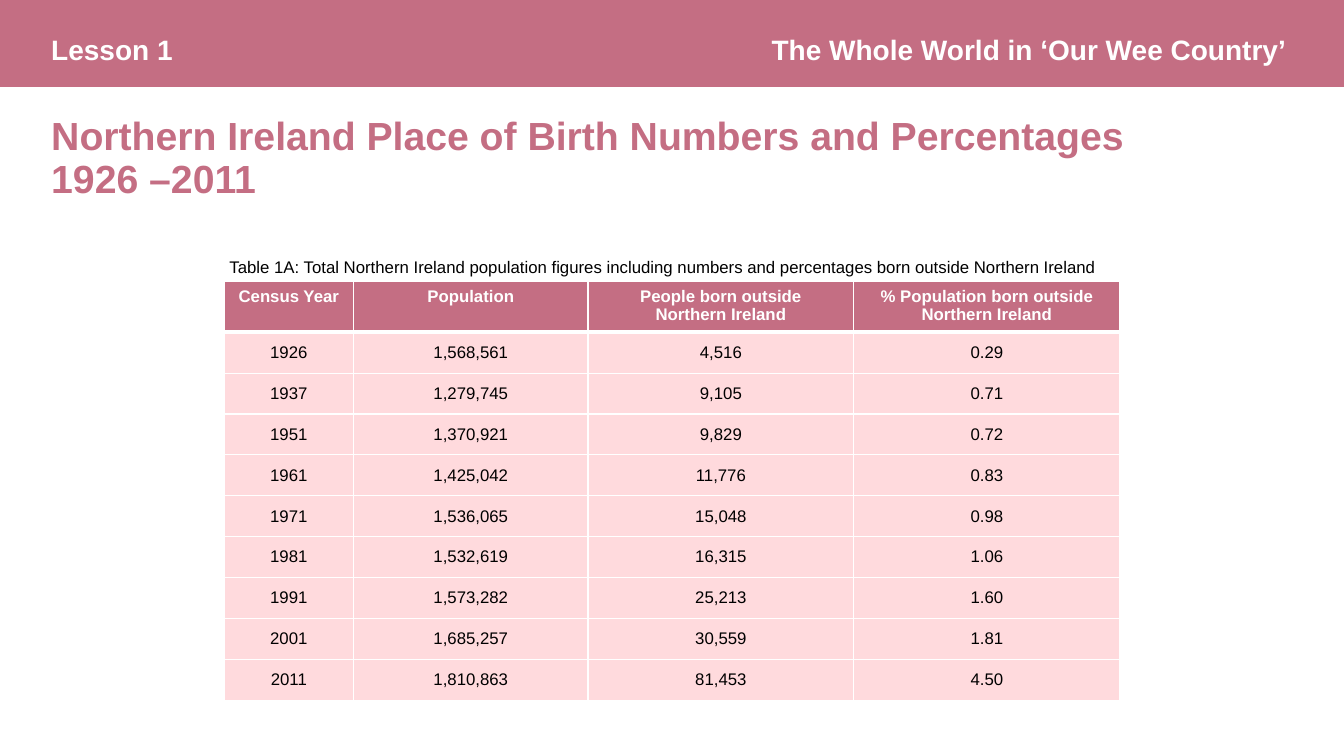
from dataclasses import dataclass

from lxml import etree
from pptx import Presentation
from pptx.dml.color import RGBColor
from pptx.enum.shapes import MSO_SHAPE
from pptx.enum.text import MSO_ANCHOR, PP_ALIGN
from pptx.oxml.ns import qn
from pptx.util import Pt

LEFT, CENTER, RIGHT = PP_ALIGN.LEFT, PP_ALIGN.CENTER, PP_ALIGN.RIGHT
TOP, MIDDLE = MSO_ANCHOR.TOP, MSO_ANCHOR.MIDDLE
RECTANGLE = MSO_SHAPE.RECTANGLE

COLUMN_WIDTHS = (92.7, 167.3, 190, 190)
HEADER_HEIGHT, ROW_HEIGHT = 35.6, 29.2
HEADINGS = (
    "Census Year",
    "Population",
    "People born outside\nNorthern Ireland",
    "% Population born outside Northern Ireland",
)
CENSUS = (
    ("1926", "1,568,561", "4,516", "0.29"),
    ("1937", "1,279,745", "9,105", "0.71"),
    ("1951", "1,370,921", "9,829", "0.72"),
    ("1961", "1,425,042", "11,776", "0.83"),
    ("1971", "1,536,065", "15,048", "0.98"),
    ("1981", "1,532,619", "16,315", "1.06"),
    ("1991", "1,573,282", "25,213", "1.60"),
    ("2001", "1,685,257", "30,559", "1.81"),
    ("2011", "1,810,863", "81,453", "4.50"),
)


@dataclass(frozen=True)
class Theme:
    """Colours, typeface and type sizes of the lesson."""

    rose: str = "C46E83"
    blush: str = "FFDADD"
    white: str = "FFFFFF"
    black: str = "000000"
    typeface: str = "Arial"
    banner_size: int = 20
    title_size: int = 28
    table_size: int = 12


class LessonSlide:
    """Draws lesson elements on one slide in a given theme."""

    def __init__(self, slide, theme):
        """Keep the slide and its theme."""
        self.slide = slide
        self.theme = theme

    def set_words(self, frame, words, size, color, bold=False, align=LEFT, spacing=None):
        """Fill a text frame with one formatted paragraph per line."""
        frame.text = words
        font_values = {"name": self.theme.typeface, "size": Pt(size), "bold": bold}
        for paragraph in frame.paragraphs:
            paragraph.alignment = align
            paragraph.line_spacing = spacing
            for run in paragraph.runs:
                for attribute, value in font_values.items():
                    setattr(run.font, attribute, value)
                run.font.color.rgb = RGBColor.from_string(color)

    def band(self, left, top, width, height, color):
        """Add a plain filled rectangle."""
        band = self.slide.shapes.add_shape(
            RECTANGLE, Pt(left), Pt(top), Pt(width), Pt(height))
        band.shadow.inherit = False
        band.fill.solid()
        band.fill.fore_color.rgb = RGBColor.from_string(color)
        band.line.fill.background()

    def text(self, left, top, width, height, words, size, color, **style):
        """Add a wrapping text box."""
        box = self.slide.shapes.add_textbox(Pt(left), Pt(top), Pt(width), Pt(height))
        box.text_frame.word_wrap = True
        self.set_words(box.text_frame, words, size, color, **style)

    def border(self, cell, widths):
        """Draw the sides of a cell in white."""
        properties = cell._tc.get_or_add_tcPr()
        for position, (side, width) in enumerate(widths.items()):
            line = etree.Element(qn(f"a:ln{side}"), w=str(Pt(width)))
            fill = etree.SubElement(line, qn("a:solidFill"))
            etree.SubElement(fill, qn("a:srgbClr"), val=self.theme.white)
            properties.insert(position, line)

    def table(self, left, top, widths, headings, records):
        """Add a table with a coloured heading row."""
        theme = self.theme
        heights = [HEADER_HEIGHT] + [ROW_HEIGHT] * len(records)
        table = self.slide.shapes.add_table(
            len(heights), len(widths), Pt(left), Pt(top),
            Pt(sum(widths)), Pt(sum(heights))).table
        table.horz_banding = False
        for column, width in zip(table.columns, widths):
            column.width = Pt(width)
        for row, height in zip(table.rows, heights):
            row.height = Pt(height)
        for row_number, record in enumerate((headings, *records)):
            heading = row_number == 0
            fill, ink = (theme.rose, theme.white) if heading else (theme.blush, theme.black)
            borders = {"L": 1, "R": 1, "T": 3 if row_number == 1 else 1,
                       "B": 3 if heading else 1}
            for column_number, words in enumerate(record):
                cell = table.cell(row_number, column_number)
                cell.vertical_anchor = TOP if heading else MIDDLE
                cell.fill.solid()
                cell.fill.fore_color.rgb = RGBColor.from_string(fill)
                self.border(cell, borders)
                self.set_words(cell.text_frame, words, theme.table_size, ink,
                               bold=heading, align=CENTER)


def main():
    """Build the census slide and save it."""
    presentation = Presentation()
    presentation.slide_width, presentation.slide_height = Pt(960), Pt(540)
    theme = Theme()
    lesson = LessonSlide(
        presentation.slides.add_slide(presentation.slide_layouts[6]), theme)
    lesson.band(0, 0, 960, 62, theme.rose)
    lesson.text(29.5, 19.5, 124.5, 31.5, "Lesson 1",
                theme.banner_size, theme.white, bold=True)
    lesson.text(427.5, 19.5, 498.5, 31.5, "The Whole World in ‘Our Wee Country’",
                theme.banner_size, theme.white, bold=True, align=RIGHT)
    lesson.text(29.5, 80, 896.5, 72,
                "Northern Ireland Place of Birth Numbers and Percentages\n1926 –2011",
                theme.title_size, theme.rose, bold=True, spacing=0.9)
    lesson.table(160, 201.3, COLUMN_WIDTHS, HEADINGS, CENSUS)
    lesson.text(156.8, 180, 656.6, 36,
                "Table 1A: Total Northern Ireland population figures including "
                "numbers and percentages born outside Northern Ireland",
                theme.table_size, theme.black)
    presentation.save("out.pptx")


if __name__ == "__main__":
    main()
